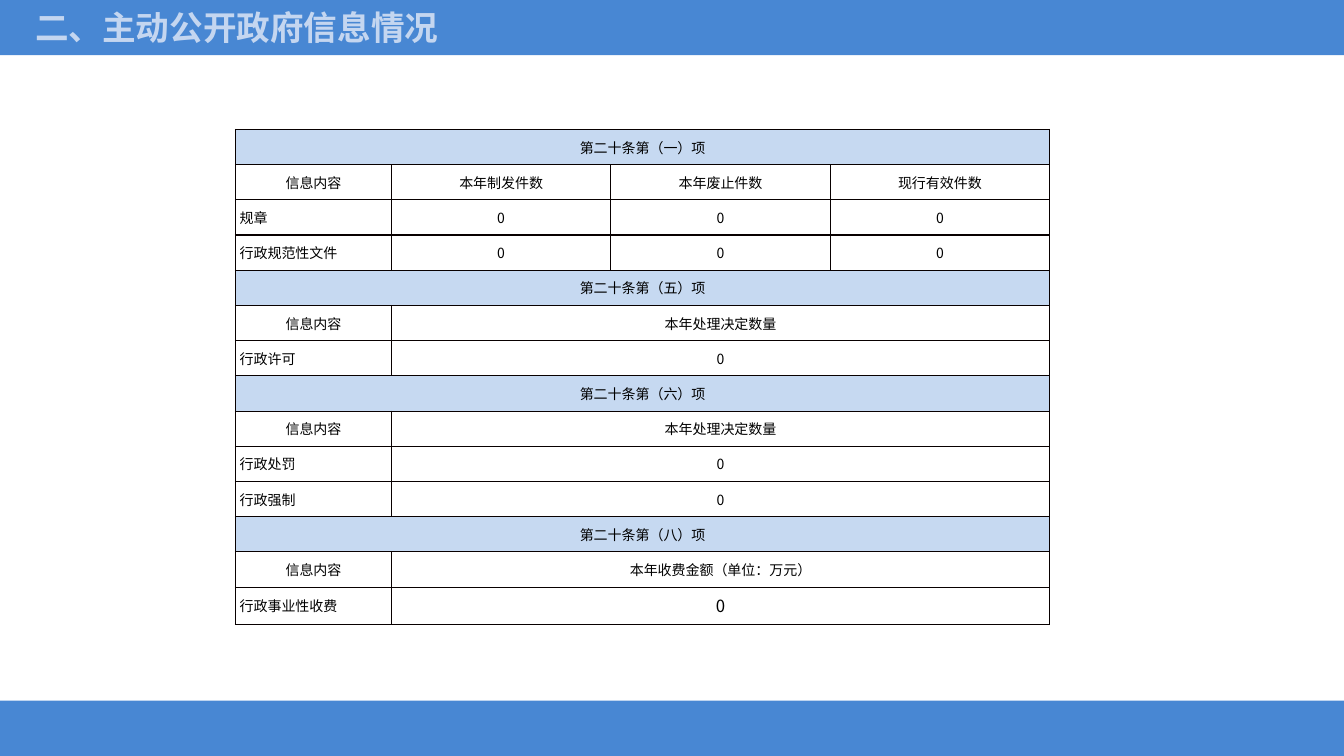
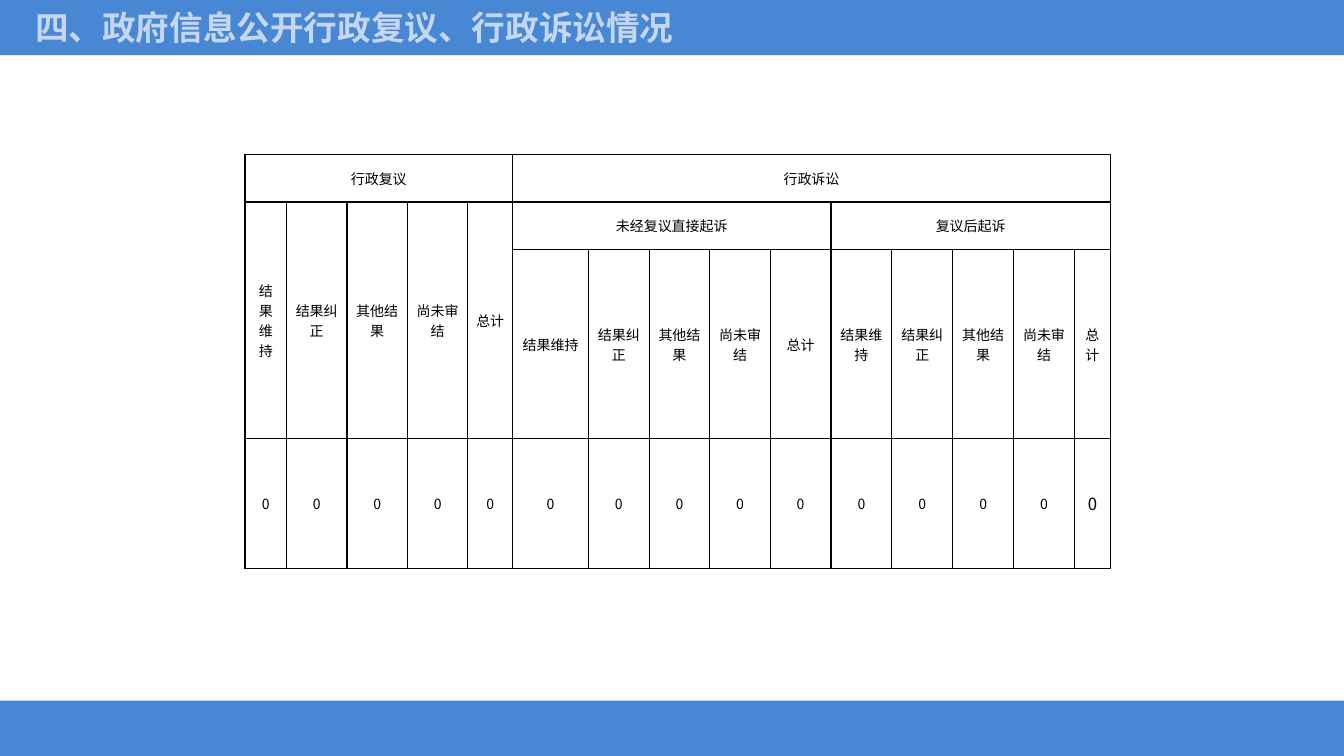
from pptx import Presentation
from pptx.dml.color import RGBColor
from pptx.enum.shapes import MSO_SHAPE
from pptx.enum.text import MSO_ANCHOR as ANCHOR, PP_ALIGN as ALIGN
from pptx.oxml.ns import qn
from pptx.util import Pt
from lxml.etree import SubElement

SLIDE_W, SLIDE_H, BAND_H = 960, 540, 39.5
FONT = "Noto Sans CJK SC"
BLUE, TITLE_COLOR, SECTION_FILL = "4887D3", "C4D6F0", "C6D9F1"
TEXT_COLOR, BORDER_COLOR = "000000", "080000"

# Markers for cells that belong to the merged cell on their left or above.
LEFT, UP = "←", "↑"
HEAD = "信息内容"


def wide_row(label, value):
    return [label, value, LEFT, LEFT]


def section_row(number):
    return [f"第二十条第（{number}）项"] + [LEFT] * 3


OUTCOMES = ["结果维持", "结果纠正", "其他结果", "尚未审结", "总计"]

SLIDES = [
    {
        "title": "二、主动公开政府信息情况",
        "at": (168.2, 92.5),
        "cols": [111.4] + [156.7] * 3,
        "rows": [25.17] * 13 + [26.5],
        "margin": 3,
        "row_labels": True,
        "cells": [
            section_row("一"),
            [HEAD, "本年制发件数", "本年废止件数", "现行有效件数"],
            ["规章", "0", "0", "0"],
            ["行政规范性文件", "0", "0", "0"],
            section_row("五"),
            wide_row(HEAD, "本年处理决定数量"),
            wide_row("行政许可", "0"),
            section_row("六"),
            wide_row(HEAD, "本年处理决定数量"),
            wide_row("行政处罚", "0"),
            wide_row("行政强制", "0"),
            section_row("八"),
            wide_row(HEAD, "本年收费金额（单位：万元）"),
            wide_row("行政事业性收费", "0"),
        ],
    },
    {
        "title": "四、政府信息公开行政复议、行政诉讼情况",
        "at": (175, 110.3),
        "cols": [29.6] + [43.2] * 3 + [31.9, 54.3] + [43.3] * 4 + [43.5] * 4 + [25.7],
        "rows": [34, 34, 135, 92.8],
        "margin": 5,
        "row_labels": False,
        "cells": [
            ["行政复议"] + [LEFT] * 4 + ["行政诉讼"] + [LEFT] * 9,
            OUTCOMES + ["未经复议直接起诉"] + [LEFT] * 4 + ["复议后起诉"] + [LEFT] * 4,
            [UP] * 5 + OUTCOMES * 2,
            ["0"] * 15,
        ],
    },
]


def rgb(value):
    return RGBColor.from_string(value)


def style_text(p, size, color, bold=False):
    for r in p.runs:
        r.font.size, r.font.name, r.font.bold = Pt(size), FONT, bold
        r.font.color.rgb = rgb(color)
        SubElement(r.font._element, qn("a:ea"), typeface=FONT)


def add_band(s, top):
    sp = s.shapes.add_shape(MSO_SHAPE.RECTANGLE, 0, Pt(top), Pt(SLIDE_W), Pt(BAND_H))
    sp.shadow.inherit = False
    sp.fill.solid()
    sp.fill.fore_color.rgb = rgb(BLUE)
    sp.line.fill.background()


def add_title(s, text):
    tf = s.shapes.add_textbox(Pt(18), Pt(1.4), Pt(489), Pt(36)).text_frame
    tf.word_wrap = True
    tf.vertical_anchor = ANCHOR.MIDDLE
    tf.text = text
    style_text(tf.paragraphs[0], 24, TITLE_COLOR, bold=True)


def add_borders(cell):
    tc_pr = cell._tc.get_or_add_tcPr()
    for side in ("lnL", "lnR", "lnT", "lnB"):
        ln = SubElement(tc_pr, qn(f"a:{side}"), w=str(Pt(1)))
        fill = SubElement(ln, qn("a:solidFill"))
        SubElement(fill, qn("a:srgbClr"), val=BORDER_COLOR)


def run_length(marks, marker):
    """Count the cells of a merge: the first one and the markers after it."""
    length = 1
    while length < len(marks) and marks[length] == marker:
        length += 1
    return length


def add_grid(s, data):
    cells, cols, rows = data["cells"], data["cols"], data["rows"]
    x, y = data["at"]
    table = s.shapes.add_table(len(rows), len(cols), Pt(x), Pt(y),
                               Pt(sum(cols)), Pt(sum(rows))).table
    table.first_row = table.horz_banding = False
    for column, width in zip(table.columns, cols):
        column.width = Pt(width)
    for row, height in zip(table.rows, rows):
        row.height = Pt(height)

    last = [(i, j) for i, row in enumerate(cells)
            for j, text in enumerate(row) if text not in (LEFT, UP)][-1]
    for i, row in enumerate(cells):
        is_section = data["row_labels"] and row[1:] == [LEFT] * 3
        for j, text in enumerate(row):
            cell = table.cell(i, j)
            add_borders(cell)
            if is_section:
                cell.fill.solid()
                cell.fill.fore_color.rgb = rgb(SECTION_FILL)
            else:
                cell.fill.background()
            cell.margin_left = cell.margin_right = Pt(data["margin"])
            cell.margin_top = cell.margin_bottom = 0
            if text in (LEFT, UP):
                continue
            across = run_length(row[j:], LEFT)
            down = run_length([line[j] for line in cells[i:]], UP)
            if across * down > 1:
                cell.merge(table.cell(i + down - 1, j + across - 1))
            cell.vertical_anchor = ANCHOR.MIDDLE
            cell.text_frame.text = text
            p = cell.text_frame.paragraphs[0]
            is_label = data["row_labels"] and j == 0 and text != HEAD and not is_section
            p.alignment = ALIGN.LEFT if is_label else ALIGN.CENTER
            style_text(p, 12 if (i, j) == last else 10, TEXT_COLOR)


def main():
    prs = Presentation()
    prs.slide_width, prs.slide_height = Pt(SLIDE_W), Pt(SLIDE_H)
    for data in SLIDES:
        s = prs.slides.add_slide(prs.slide_layouts[6])
        add_band(s, 0)
        add_title(s, data["title"])
        add_band(s, SLIDE_H - BAND_H)
        add_grid(s, data)
    prs.save("out.pptx")


if __name__ == "__main__":
    main()
